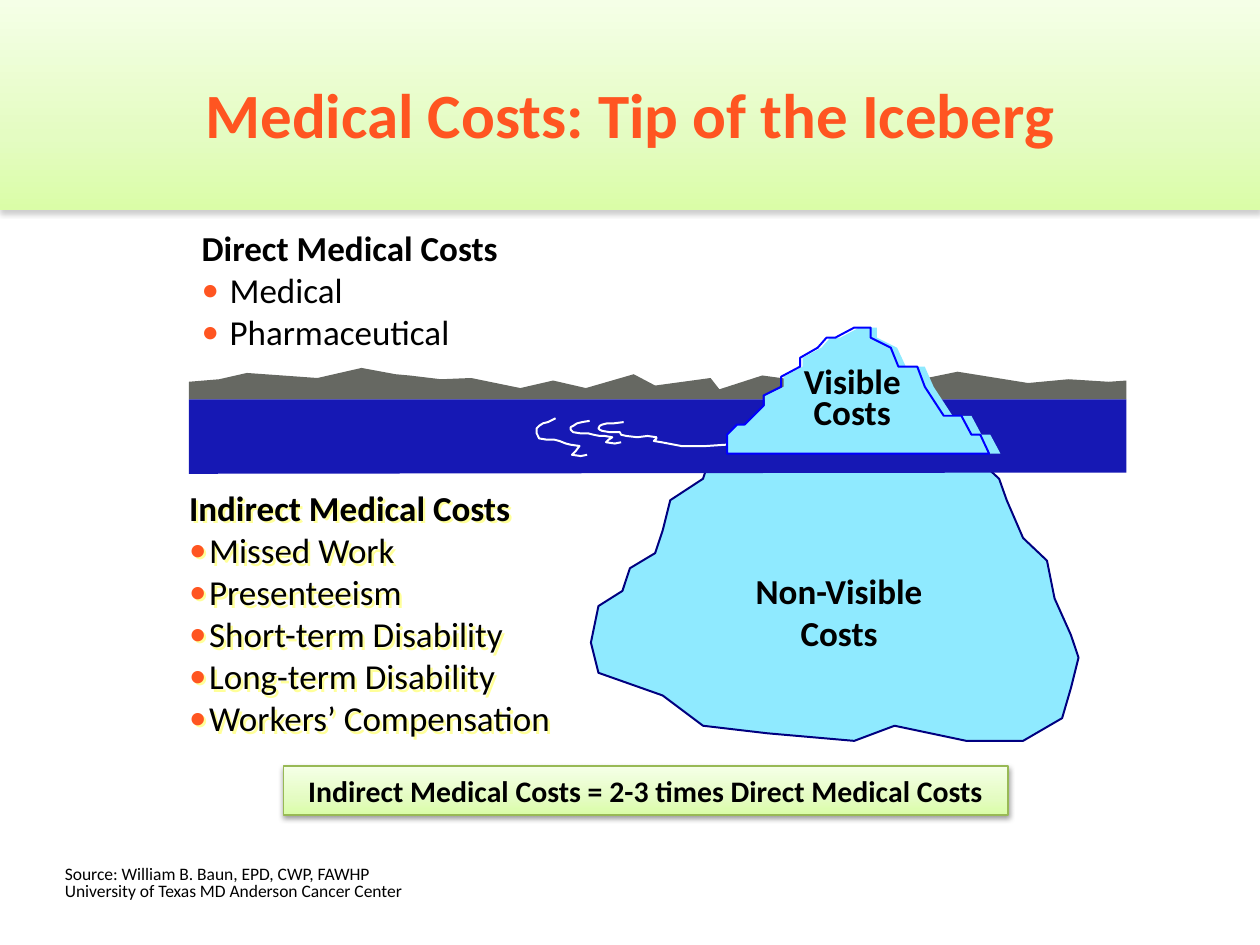
from lxml.etree import SubElement
from pptx import Presentation
from pptx.dml.color import RGBColor
from pptx.enum.shapes import MSO_SHAPE
from pptx.enum.text import MSO_ANCHOR, MSO_AUTO_SIZE, PP_ALIGN
from pptx.oxml import parse_xml
from pptx.oxml.ns import nsdecls, qn
from pptx.util import Pt

COLORS = {
    "accent": "FF5521", "text": "000000", "ice": "8FEAFF", "ice_edge": "000080",
    "tip_edge": "0000FF", "water": "1618B4", "shore": "666862", "foam": "FFFFFF",
    "box_edge": "98B955", "band_shadow": "808080", "box_shadow": "000000",
    "list_shadow": "FFFF99",
}
GREEN_STOPS = [(0, "DAFDA7"), (35, "E4FCC2"), (100, "F5FFE7")]
GRID = Pt(0.72)  # outlines below are drawn on a grid of 0.72 pt

UNDERWATER = [
    (583, 344), (564, 362), (558, 380), (532, 397), (526, 421), (520, 439), (500, 451),
    (494, 469), (475, 481), (469, 510), (475, 534), (526, 552), (558, 576), (609, 582),
    (678, 588), (710, 576), (767, 588), (812, 588), (843, 570), (850, 546), (856, 522),
    (850, 504), (837, 475), (831, 445), (812, 427), (799, 397), (793, 380), (780, 368),
    (780, 356), (767, 344)]
SHORE = [
    (150, 317), (150, 303), (174, 301), (196, 296), (252, 300), (287, 292), (314, 297),
    (325, 298), (350, 301), (374, 300), (413, 308), (439, 302), (465, 308), (503, 297),
    (520, 306), (564, 300), (571, 309), (605, 298), (649, 304), (676, 298), (693, 298),
    (721, 303), (760, 295), (816, 304), (848, 301), (880, 303), (894, 302), (894, 317)]
WATER = [(150, 317), (150, 376), (894, 375), (894, 317)]
RIPPLES = [
    [(468, 334), (462, 335), (458, 336), (455, 338), (453, 339), (453, 341), (455, 343),
     (461, 344), (467, 344), (471, 345), (476, 346), (480, 346), (486, 347), (483, 349),
     (481, 351), (488, 352), (493, 351)],
    [(495, 335), (487, 336), (482, 336), (478, 337), (476, 338), (475, 340), (476, 341),
     (478, 342), (484, 343), (492, 343), (493, 345), (497, 346), (506, 347), (514, 346),
     (521, 347), (521, 348), (519, 350), (525, 351), (541, 354), (560, 354), (590, 352),
     (595, 350), (608, 349), (622, 350)],
    [(441, 332), (435, 335), (431, 336), (428, 338), (426, 340), (426, 344), (428, 348),
     (434, 349), (440, 349), (444, 350), (449, 352), (453, 353), (460, 354), (457, 358),
     (454, 361), (461, 362), (466, 361)],
]
TIP = [
    (682, 260), (667, 268), (659, 268), (652, 276), (637, 284), (637, 291), (622, 299),
    (622, 307), (607, 314), (607, 322), (592, 337), (585, 337), (577, 345), (577, 360),
    (794, 360), (786, 345), (779, 345), (771, 330), (756, 330), (741, 307), (734, 291),
    (719, 291), (712, 276), (696, 268), (696, 260)]
TIP_LEFT, TIP_EDGE_SCALE = 577, 0.96


def rgb(name):
    return RGBColor.from_string(COLORS[name])


class IcebergSlide:
    font_name = "Calibri"
    edge_width = 1.13

    def __init__(self, slide):
        self.slide = slide

    def outline(self, points, fill=None, edge=None, close=True):
        builder = self.slide.shapes.build_freeform(*points[0], scale=GRID)
        builder.add_line_segments(points[1:], close=close)
        shape = builder.convert_to_shape()
        shape.shadow.inherit = False
        self.paint(shape, fill, edge, self.edge_width)

    def paint(self, shape, fill, edge, width):
        if fill:
            shape.fill.solid()
            shape.fill.fore_color.rgb = rgb(fill)
        else:
            shape.fill.background()
        if edge:
            shape.line.color.rgb = rgb(edge)
            shape.line.width = Pt(width)
        else:
            shape.line.fill.background()

    def shadow(self, shape, color, alpha, blur, distance, angle):
        shape.shadow.inherit = False
        effects = shape.element.spPr.find(qn("a:effectLst"))
        outer = SubElement(effects, qn("a:outerShdw"), blurRad=str(Pt(blur)),
                           dist=str(Pt(distance)), dir=str(angle * 60000), rotWithShape="0")
        tint = SubElement(outer, qn("a:srgbClr"), val=COLORS[color])
        SubElement(tint, qn("a:alpha"), val=str(alpha * 1000))

    def green_panel(self, box, shadow, edge=None):
        """Rectangle with the green gradient, light at the top."""
        panel = self.slide.shapes.add_shape(MSO_SHAPE.RECTANGLE, *map(Pt, box))
        self.paint(panel, None, edge, 0.75)
        stops = "".join(f'<a:gs pos="{pos * 1000}"><a:srgbClr val="{color}"/></a:gs>'
                        for pos, color in GREEN_STOPS)
        gradient = parse_xml(f'<a:gradFill {nsdecls("a")} rotWithShape="1"><a:gsLst>{stops}'
                             '</a:gsLst><a:lin ang="16200000" scaled="0"/></a:gradFill>')
        properties = panel.element.spPr
        properties.replace(properties.find(qn("a:noFill")), gradient)
        self.shadow(panel, shadow, 38, 3.1, 1.6, 90)
        return panel

    def set_lines(self, frame, lines, size, bold=False, align=PP_ALIGN.LEFT, spacing=1.0,
                  color="text", inset=None, bullet_indent=None):
        """Fill a frame; with bullet_indent every line after the heading is a bullet."""
        frame.word_wrap = True
        frame.auto_size = MSO_AUTO_SIZE.NONE
        if inset is not None:
            frame.margin_left = frame.margin_right = Pt(inset)
            frame.margin_top = frame.margin_bottom = Pt(inset)
        for index, line in enumerate(lines):
            paragraph = frame.paragraphs[0] if index == 0 else frame.add_paragraph()
            paragraph.alignment = align
            paragraph.line_spacing = spacing
            paragraph.space_before = Pt(0)
            is_bullet = bullet_indent is not None and index > 0
            if bullet_indent is not None:
                self.bullet(paragraph, bullet_indent if is_bullet else 0)
            run = paragraph.add_run()
            run.text = line
            run.font.name = self.font_name
            run.font.size = Pt(size)
            run.font.bold = bold and not is_bullet
            run.font.color.rgb = rgb(color)

    def bullet(self, paragraph, indent):
        """Hang an accent bullet, or clear the bullet when indent is zero."""
        properties = paragraph._p.get_or_add_pPr()
        properties.set("marL", str(Pt(indent)))
        properties.set("indent", str(-Pt(indent)))
        if indent:
            tint = SubElement(properties, qn("a:buClr"))
            SubElement(tint, qn("a:srgbClr"), val=COLORS["accent"])
            SubElement(properties, qn("a:buFont"), typeface=self.font_name)
            SubElement(properties, qn("a:buChar"), char="•")
        else:
            SubElement(properties, qn("a:buNone"))

    def place(self, placeholder, box):
        placeholder.left, placeholder.top, placeholder.width, placeholder.height = map(Pt, box)
        return placeholder.text_frame

    def label(self, box, lines, size=20, **style):
        self.set_lines(self.slide.shapes.add_textbox(*map(Pt, box)).text_frame,
                       lines, size, **style)


def main():
    deck = Presentation()
    deck.slide_width, deck.slide_height = Pt(720), Pt(540)
    slide = deck.slides.add_slide(deck.slide_layouts[3])
    title, direct, indirect = slide.placeholders
    page = IcebergSlide(slide)

    band = page.green_panel((0, 0, 720, 120), "band_shadow")
    title.element.addprevious(band.element)
    title_frame = page.place(title, (36, 21.6, 648, 86.4))
    title_frame.vertical_anchor = MSO_ANCHOR.MIDDLE
    page.set_lines(title_frame, ["Medical Costs: Tip of the Iceberg"], 36, bold=True,
                   align=PP_ALIGN.CENTER, color="accent")

    page.outline(UNDERWATER, "ice", "ice_edge")
    page.outline(SHORE, "shore")
    page.outline(WATER, "water")
    for ripple in RIPPLES:
        page.outline(ripple, edge="foam", close=False)
    page.outline(TIP, "ice")
    page.outline([(TIP_LEFT + (x - TIP_LEFT) * TIP_EDGE_SCALE, y) for x, y in TIP],
                 edge="tip_edge")

    page.set_lines(page.place(direct, (108, 126, 192, 80)),
                   ["Direct Medical Costs", "Medical", "Pharmaceutical"],
                   20, bold=True, bullet_indent=16)
    page.set_lines(page.place(indirect, (108, 278, 222, 146)),
                   ["Indirect Medical Costs", "Missed Work", "Presenteeism",
                    "Short-term Disability", "Long-term Disability",
                    "Workers’ Compensation"],
                   20, bold=True, inset=0, bullet_indent=11.5)
    page.shadow(indirect, "list_shadow", 100, 0, 2, 45)

    centered = {"bold": True, "align": PP_ALIGN.CENTER}
    page.label((424, 325.5, 111, 75), ["Non-Visible", "Costs"], inset=0, **centered)
    page.label((457, 205.2, 60, 24.5), ["Visible"], inset=0, **centered)
    page.label((457, 223.2, 60, 24.5), ["Costs"], inset=0, **centered)

    ratio = page.green_panel((162, 437.8, 414, 28), "box_shadow", "box_edge")
    page.set_lines(ratio.text_frame,
                   ["Indirect Medical Costs = 2-3 times Direct Medical Costs"],
                   17, **centered)
    page.label((30, 492, 516, 27.4),
               ["Source: William B. Baun, EPD, CWP, FAWHP",
                "University of Texas MD Anderson Cancer Center"], 10, spacing=0.8)
    deck.save("out.pptx")


if __name__ == "__main__":
    main()
